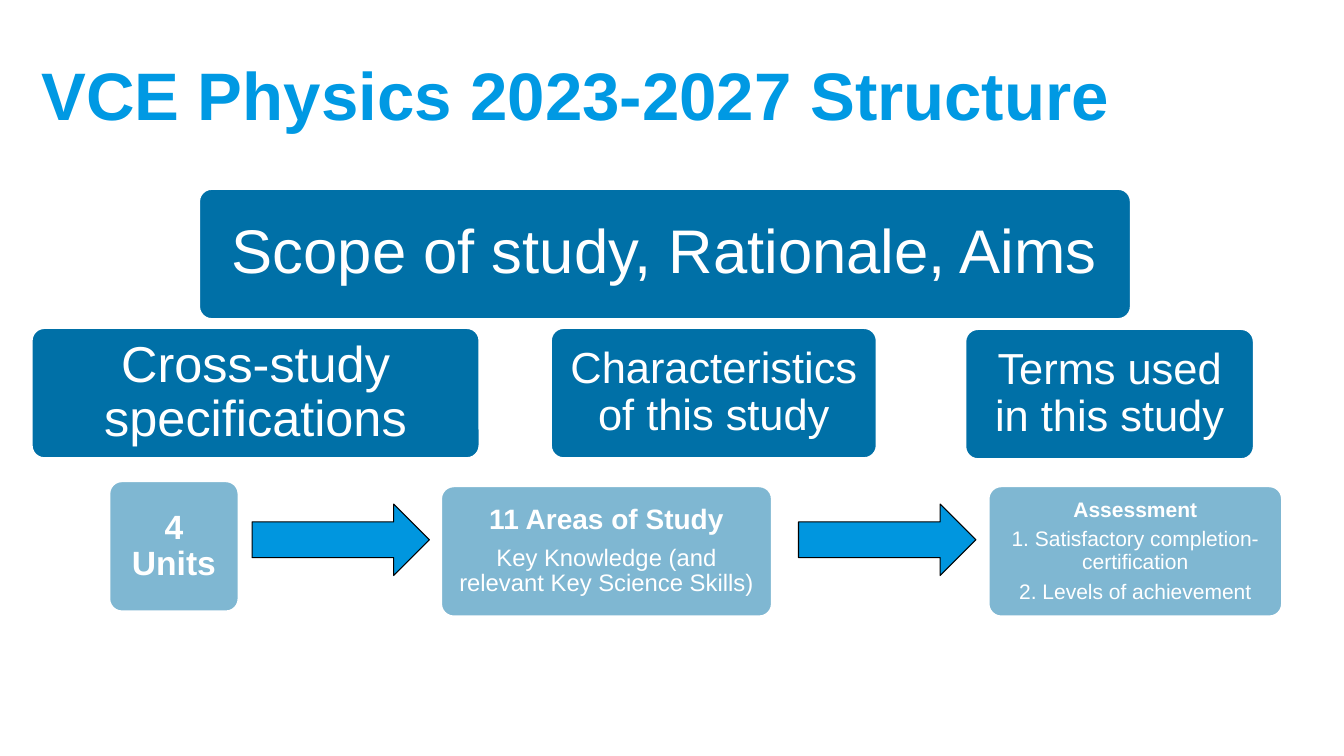
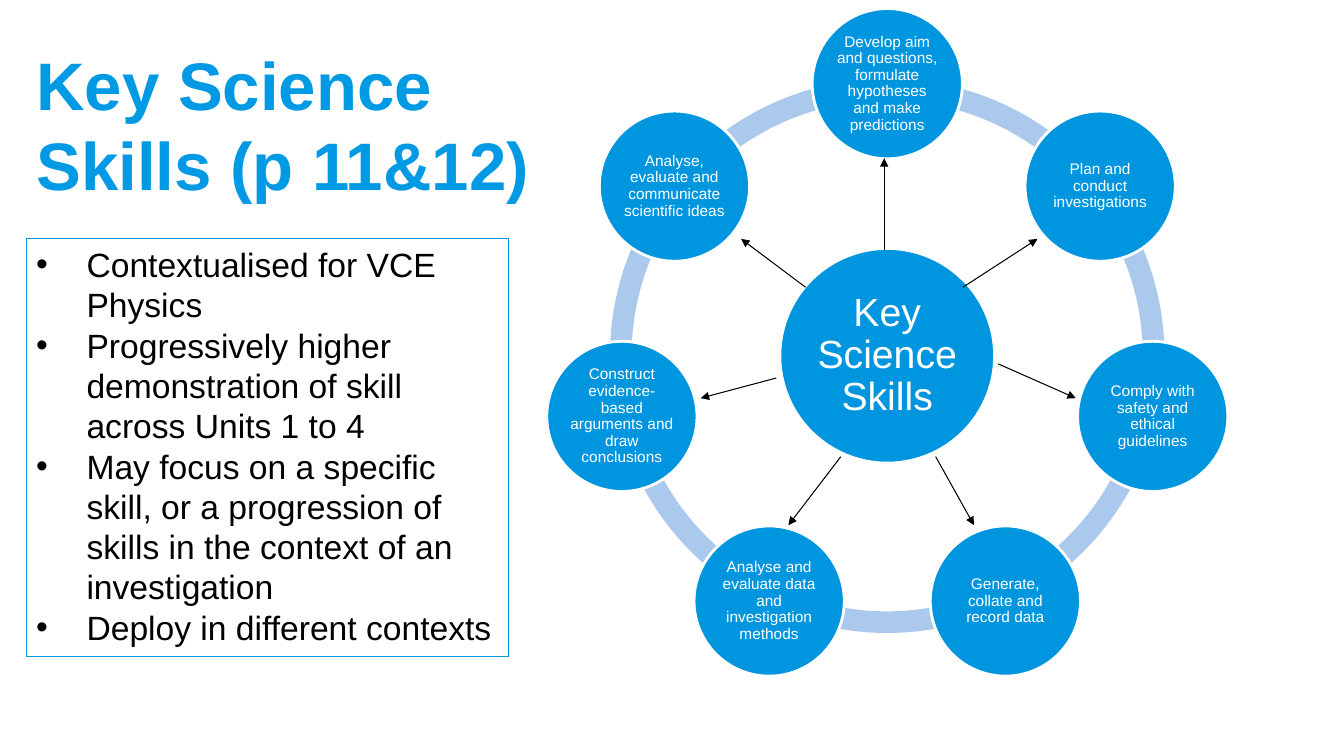
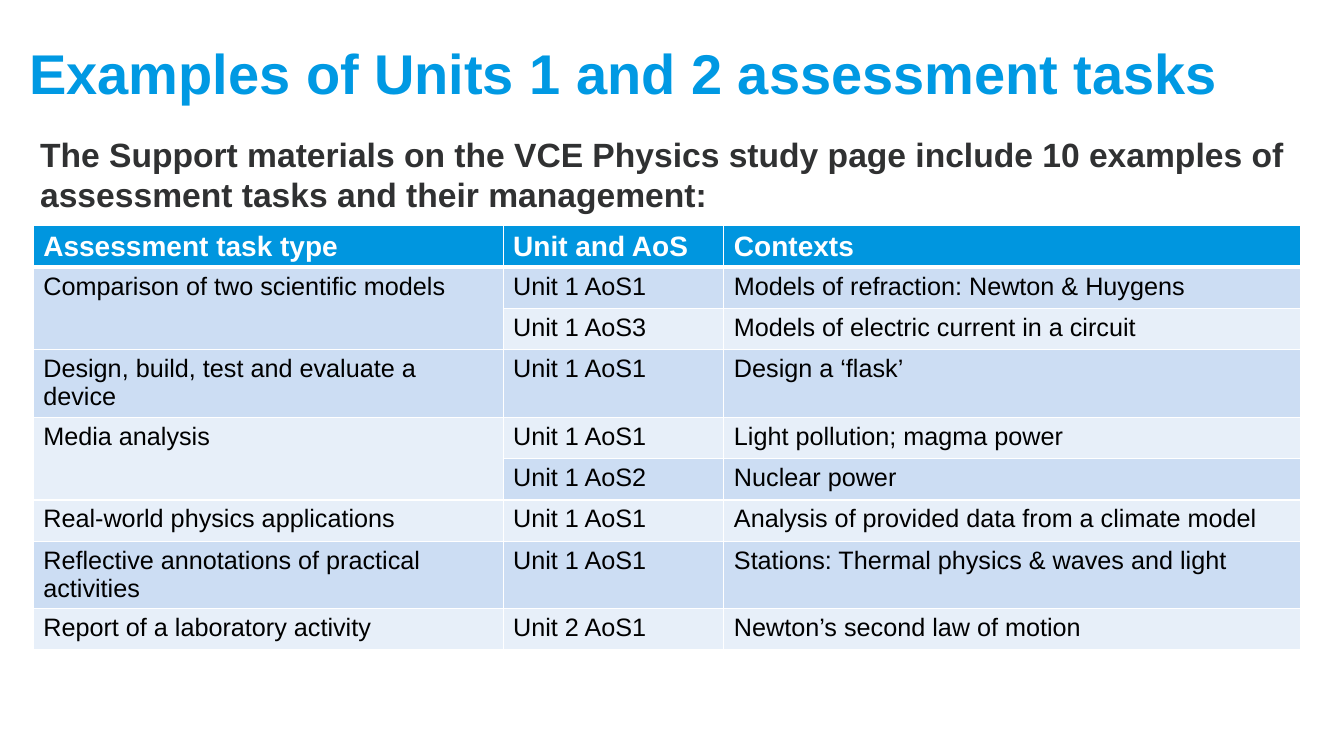
from dataclasses import dataclass
from math import cos, radians, sin
from typing import Optional

from lxml.etree import SubElement
from pptx import Presentation
from pptx.dml.color import RGBColor
from pptx.enum.shapes import MSO_CONNECTOR, MSO_SHAPE
from pptx.enum.text import MSO_ANCHOR, MSO_AUTO_SIZE, PP_ALIGN
from pptx.oxml.ns import qn
from pptx.util import Inches, Pt

FONT = "Arial"
TITLE_BLUE = "0099E3"
BRIGHT_BLUE = "0096DF"
DEEP_BLUE = "0070A7"
RING_BLUE = "ABC9EC"
BAND_COLORS = ("E7EFF9", "CCDDF3")
WHITE = "FFFFFF"
BLACK = "000000"
DARK_GREY = "303132"


@dataclass(frozen=True)
class Line:
    """One paragraph of a card or circle."""

    text: str
    size: float
    bold: bool = False


@dataclass(frozen=True)
class Card:
    """A rounded box in the structure diagram."""

    left: float
    top: float
    width: float
    inset: float
    lines: tuple[Line, ...]
    opacity: int = 100


@dataclass(frozen=True)
class Arrow:
    """A thin arrow from the hub towards a skill."""

    start: tuple[float, float]
    end: tuple[float, float]


CARD_HEIGHT = 1.3
CARDS = (
    Card(1.97, 1.87, 9.25, 0.18, (Line("Scope of study, Rationale, Aims", 44),)),
    Card(0.31, 3.25, 4.45, 0.15, (Line("Cross-study specifications", 36),)),
    Card(5.46, 3.25, 3.24, 0.13, (Line("Characteristics of this study", 31),)),
    Card(9.57, 3.26, 2.87, 0.13, (Line("Terms used in this study", 31),)),
    Card(1.08, 4.77, 1.29, 0.1, (Line("4 Units", 24, True),), 50),
    Card(4.37, 4.82, 3.29, 0.08, (
        Line("11 Areas of Study", 20, True),
        Line("Key Knowledge (and relevant Key Science Skills)", 17),
    ), 50),
    Card(9.8, 4.82, 2.92, 0.06, (
        Line("Assessment", 15, True),
        Line("1. Satisfactory completion- certification", 15),
        Line("2. Levels of achievement", 15),
    ), 50),
)
FLOW_ARROW_LEFTS = (2.5, 7.92)

HUB = (8.8, 3.53)
HUB_SIZE = 2.13
SKILL_SIZE = 1.49
SKILL_RADIUS = 2.7
RING_SIZE = 5.5
SKILLS = (
    "Develop aim and questions, formulate hypotheses and make predictions",
    "Plan and conduct investigations",
    "Comply with safety and ethical guidelines",
    "Generate, collate and record data",
    "Analyse and evaluate data and investigation methods",
    "Construct evidence-based arguments and draw conclusions",
    "Analyse, evaluate and communicate scientific ideas",
)
SKILL_ARROWS = (
    Arrow((8.77, 2.48), (8.77, 1.57)),
    Arrow((9.55, 2.85), (10.29, 2.37)),
    Arrow((9.9, 3.61), (10.67, 3.95)),
    Arrow((9.28, 4.53), (9.66, 5.21)),
    Arrow((8.34, 4.53), (7.82, 5.21)),
    Arrow((7.7, 3.75), (6.95, 3.95)),
    Arrow((7.99, 2.85), (7.35, 2.37)),
)
SKILL_NOTES = (
    "Contextualised for VCE Physics",
    "Progressively higher demonstration of skill across Units 1 to 4",
    "May focus on a specific skill, or a progression of skills in the context of an investigation",
    "Deploy in different contexts",
)

COLUMN_WIDTHS = (4.66, 2.19, 5.72)
ROW_HEIGHT = 0.41
TASK_ROWS = (
    ("Assessment task type", "Unit and AoS", "Contexts"),
    ("Comparison of two scientific models", "Unit 1 AoS1", "Models of refraction: Newton & Huygens"),
    ("", "Unit 1 AoS3", "Models of electric current in a circuit"),
    ("Design, build, test and evaluate a device", "Unit 1 AoS1", "Design a ‘flask’"),
    ("Media analysis", "Unit 1 AoS1", "Light pollution; magma power"),
    ("", "Unit 1 AoS2", "Nuclear power"),
    ("Real-world physics applications", "Unit 1 AoS1", "Analysis of provided data from a climate model"),
    ("Reflective annotations of practical activities", "Unit 1 AoS1", "Stations: Thermal physics & waves and light"),
    ("Report of a laboratory activity", "Unit 2 AoS1", "Newton’s second law of motion"),
)


def rgb(color: str) -> RGBColor:
    """Turn a hex string into a colour."""
    return RGBColor.from_string(color)


def format_paragraph(para, size: float, color: str, bold: bool = False,
                     align=PP_ALIGN.LEFT, spacing: float = 1.0) -> None:
    """Apply the deck's font and the given style to a paragraph."""
    para.alignment = align
    para.line_spacing = spacing
    for span in para.runs:
        span.font.name = FONT
        span.font.size = Pt(size)
        span.font.bold = bold
        span.font.color.rgb = rgb(color)


def add_titled_page(deck, title: str, left: float, top: float, width: float,
                    height: float = 1.25, size: float = 48):
    """Add a title-only page and place its title."""
    page = deck.slides.add_slide(deck.slide_layouts[5])
    box = page.shapes.title
    box.left, box.top = Inches(left), Inches(top)
    box.width, box.height = Inches(width), Inches(height)
    frame = box.text_frame
    frame.text = title
    frame.word_wrap = True
    frame.auto_size = MSO_AUTO_SIZE.NONE
    frame.vertical_anchor = MSO_ANCHOR.MIDDLE
    format_paragraph(frame.paragraphs[0], size, TITLE_BLUE, True)
    return page


def add_figure(page, kind, left: float, top: float, width: float, height: float,
               fill: Optional[str], line: Optional[str] = None, line_width: float = 2):
    """Add a flat preset shape."""
    shape = page.shapes.add_shape(kind, Inches(left), Inches(top), Inches(width), Inches(height))
    shape.shadow.inherit = False
    if fill:
        shape.fill.solid()
        shape.fill.fore_color.rgb = rgb(fill)
    else:
        shape.fill.background()
    if line:
        shape.line.color.rgb = rgb(line)
        shape.line.width = Pt(line_width)
    else:
        shape.line.fill.background()
    return shape


def write_lines(shape, lines: tuple[Line, ...], inset: float) -> None:
    """Write centred white lines inside a shape."""
    frame = shape.text_frame
    frame.word_wrap = True
    frame.vertical_anchor = MSO_ANCHOR.MIDDLE
    frame.margin_left = frame.margin_right = Inches(inset)
    frame.margin_top = frame.margin_bottom = Inches(inset)
    frame.text = "\n".join(line.text for line in lines)
    for para, line in zip(frame.paragraphs, lines):
        format_paragraph(para, line.size, WHITE, line.bold, PP_ALIGN.CENTER, 0.9)
        para.space_after = Pt(round(line.size * 0.35))


def set_opacity(shape, percent: int) -> None:
    """Make a solid fill partly transparent."""
    color = shape._element.spPr.find(qn("a:solidFill")).find(qn("a:srgbClr"))
    SubElement(color, qn("a:alpha"), val=str(percent * 1000))


def add_card(page, card: Card) -> None:
    """Draw one rounded card."""
    shape = add_figure(page, MSO_SHAPE.ROUNDED_RECTANGLE, card.left, card.top,
                       card.width, CARD_HEIGHT, DEEP_BLUE, WHITE)
    shape.adjustments[0] = 0.1
    if card.opacity < 100:
        set_opacity(shape, card.opacity)
    write_lines(shape, card.lines, card.inset)


def add_circle(page, center: tuple[float, float], size: float, line: Line, inset: float) -> None:
    """Draw a labelled circle around a centre."""
    shape = add_figure(page, MSO_SHAPE.OVAL, center[0] - size / 2, center[1] - size / 2,
                       size, size, BRIGHT_BLUE, WHITE)
    write_lines(shape, (line,), inset)


def add_ring_arc(page, start: float, end: float) -> None:
    """Draw one arc of the ring between two angles in degrees."""
    arc = add_figure(page, MSO_SHAPE.BLOCK_ARC, HUB[0] - RING_SIZE / 2, HUB[1] - RING_SIZE / 2,
                     RING_SIZE, RING_SIZE, RING_BLUE)
    arc.adjustments[0] = start % 360 * 0.6
    arc.adjustments[1] = end % 360 * 0.6
    arc.adjustments[2] = 0.039


def add_arrow(page, arrow: Arrow) -> None:
    """Draw a thin black arrow."""
    points = [Inches(value) for value in arrow.start + arrow.end]
    connector = page.shapes.add_connector(MSO_CONNECTOR.STRAIGHT, *points)
    connector.line.color.rgb = rgb(BLACK)
    connector.line.width = Pt(0.75)
    SubElement(connector.line._get_or_add_ln(), qn("a:tailEnd"), type="triangle")
    SubElement(connector._element.spPr, qn("a:effectLst"))


def add_bullet(para) -> None:
    """Give a paragraph a round bullet with a hanging indent."""
    properties = para._p.get_or_add_pPr()
    properties.set("marL", str(Inches(0.5)))
    properties.set("indent", str(-Inches(0.5)))
    SubElement(properties, qn("a:buFont"), typeface=FONT)
    SubElement(properties, qn("a:buChar"), char="•")


def set_borders(cell, bottom_width: float) -> None:
    """Give a cell white borders."""
    properties = cell._tc.get_or_add_tcPr()
    widths = {"a:lnL": 1, "a:lnR": 1, "a:lnT": 1, "a:lnB": bottom_width}
    for tag, width in widths.items():
        border = SubElement(properties, qn(tag), w=str(Pt(width)))
        fill = SubElement(border, qn("a:solidFill"))
        SubElement(fill, qn("a:srgbClr"), val=WHITE)


def add_task_table(page) -> None:
    """Draw the table of assessment tasks."""
    table = page.shapes.add_table(len(TASK_ROWS), len(COLUMN_WIDTHS), Inches(0.33), Inches(2.24),
                                  Inches(sum(COLUMN_WIDTHS)),
                                  Inches(ROW_HEIGHT * len(TASK_ROWS))).table
    table.horz_banding = False
    for column, width in zip(table.columns, COLUMN_WIDTHS):
        column.width = Inches(width)
    for row_index, texts in enumerate(TASK_ROWS):
        header = row_index == 0
        table.rows[row_index].height = Inches(ROW_HEIGHT)
        for column_index, text in enumerate(texts):
            cell = table.cell(row_index, column_index)
            set_borders(cell, 3 if header else 1)
            cell.margin_bottom = Inches(0.02)
            cell.fill.solid()
            cell.fill.fore_color.rgb = rgb(BRIGHT_BLUE if header else BAND_COLORS[row_index % 2])
            if text:
                cell.text_frame.text = text
                format_paragraph(cell.text_frame.paragraphs[0], 20 if header else 18,
                                 WHITE if header else BLACK, header)
            else:
                table.cell(row_index - 1, column_index).merge(cell)


def build_structure_page(deck) -> None:
    """Build the page on the study structure."""
    page = add_titled_page(deck, "VCE Physics 2023-2027 Structure", 0.31, 0.3, 12.7)
    for card in CARDS:
        add_card(page, card)
    for left in FLOW_ARROW_LEFTS:
        add_figure(page, MSO_SHAPE.RIGHT_ARROW, left, 5, 1.76, 0.71, BRIGHT_BLUE, BLACK, 0.75)


def build_skills_page(deck) -> None:
    """Build the page on key science skills."""
    page = add_titled_page(deck, "Key Science Skills (p 11&12)", 0.26, 0.6, 5.67)
    step = 360 / len(SKILLS)
    angles = [-90 + step * index for index in range(len(SKILLS))]
    for angle in angles:
        add_ring_arc(page, angle, angle + step)
    add_circle(page, HUB, HUB_SIZE, Line("Key Science Skills", 28), 0.04)
    for angle, skill in zip(angles, SKILLS):
        center = (HUB[0] + SKILL_RADIUS * cos(radians(angle)),
                  HUB[1] + SKILL_RADIUS * sin(radians(angle)))
        add_circle(page, center, SKILL_SIZE, Line(skill, 11), 0.01)
    notes = add_figure(page, MSO_SHAPE.RECTANGLE, 0.26, 2.37, 4.78, 4.14, None, BRIGHT_BLUE, 0.75)
    frame = notes.text_frame
    frame.word_wrap = True
    frame.vertical_anchor = MSO_ANCHOR.TOP
    frame.text = "\n".join(SKILL_NOTES)
    for para in frame.paragraphs:
        add_bullet(para)
        format_paragraph(para, 24, BLACK)
    for arrow in SKILL_ARROWS:
        add_arrow(page, arrow)


def build_tasks_page(deck) -> None:
    """Build the page on assessment tasks."""
    page = add_titled_page(deck, "Examples of Units 1 and 2 assessment tasks",
                           0.19, 0.15, 12.7, 1.13, 40)
    box = page.shapes.add_textbox(Inches(0.3), Inches(1.28), Inches(12.7), Inches(0.95))
    frame = box.text_frame
    frame.word_wrap = True
    frame.text = ("The Support materials on the VCE Physics study page include 10 examples of "
                  "assessment tasks and their management:")
    format_paragraph(frame.paragraphs[0], 24, DARK_GREY, True)
    add_task_table(page)


def main() -> None:
    """Build and save the deck."""
    deck = Presentation()
    deck.slide_width, deck.slide_height = Inches(13.33), Inches(7.5)
    build_structure_page(deck)
    build_skills_page(deck)
    build_tasks_page(deck)
    deck.save("out.pptx")


if __name__ == "__main__":
    main()
